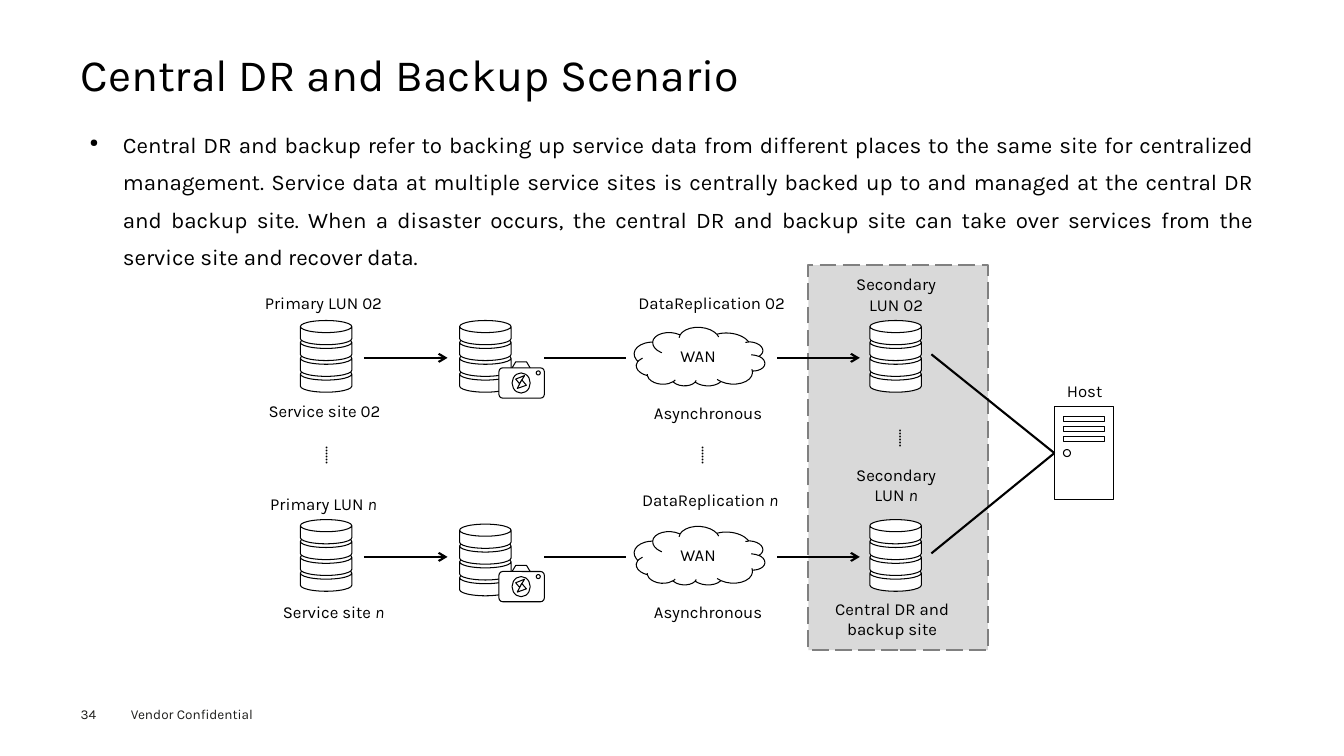
from lxml import etree
from pptx import Presentation
from pptx.dml.color import RGBColor
from pptx.enum.dml import MSO_LINE
from pptx.enum.shapes import MSO_CONNECTOR, MSO_SHAPE
from pptx.enum.text import MSO_ANCHOR, PP_ALIGN
from pptx.oxml.ns import qn
from pptx.util import Inches, Pt

RECTANGLE, ROUNDED = MSO_SHAPE.RECTANGLE, MSO_SHAPE.ROUNDED_RECTANGLE
CAN, CLOUD, OVAL = MSO_SHAPE.CAN, MSO_SHAPE.CLOUD, MSO_SHAPE.OVAL
HEXAGON, TRIANGLE = MSO_SHAPE.FLOWCHART_PREPARATION, MSO_SHAPE.ISOSCELES_TRIANGLE
STRAIGHT, LONG_DASH = MSO_CONNECTOR.STRAIGHT, MSO_LINE.LONG_DASH
TOP, MIDDLE = MSO_ANCHOR.TOP, MSO_ANCHOR.MIDDLE
LEFT, CENTER, JUSTIFY = PP_ALIGN.LEFT, PP_ALIGN.CENTER, PP_ALIGN.JUSTIFY

BLACK = RGBColor(0x00, 0x00, 0x00)
INK = RGBColor(0x1D, 0x1D, 0x1B)
WHITE = RGBColor(0xFF, 0xFF, 0xFF)
PALE_GRAY = RGBColor(0xD9, 0xD9, 0xD9)
GRAY = RGBColor(0x80, 0x80, 0x80)

LABEL_FONT = {"name": "Karla", "size": Pt(12)}
TITLE_FONT = {"name": "Karla", "size": Pt(32)}
BODY_FONT = {"name": "Karla", "size": Pt(16)}
FOOTER_FONT = {"name": "Karla", "size": Pt(9.7)}

# Grid: square cells, ten to the inch
CELL = Inches(0.1)
SLIDE_COLUMNS, SLIDE_ROWS = 133.33, 75
MARGIN, CONTENT_COLUMNS = 8, 117.3
SITE_PITCH = 19.75

BODY = (
    "Central DR and backup refer to backing up service data from different places "
    "to the same site for centralized management. Service data at multiple service "
    "sites is centrally backed up to and managed at the central DR and backup site. "
    "When a disaster occurs, the central DR and backup site can take over services "
    "from the service site and recover data."
)

# Captions: column, row, columns, rows, text, italic ending
CAPTIONS = [
    (24.1, 27.5, 16, 5, "Primary LUN 02", ""),
    (24.1, 47.5, 16, 5, "Primary LUN ", "n"),
    (24.5, 38.3, 15.4, 5, "Service site 02", ""),
    (26.3, 59.2, 13.6, 3, "Service site ", "n"),
    (61.9, 27.5, 17.4, 5, "DataReplication 02", ""),
    (61.7, 47.1, 17.5, 5, "DataReplication ", "n"),
    (62.7, 38.5, 15.1, 5, "Asynchronous", ""),
    (62.7, 58.2, 15.1, 5, "Asynchronous", ""),
    (82.8, 26.7, 12.2, 5, "Secondary LUN 02", ""),
    (82.8, 45.6, 12.2, 5, "Secondary LUN ", "n"),
    (80.9, 58.9, 15.2, 5, "Central DR and backup site", ""),
    (101.5, 37.3, 12.2, 3, "Host", ""),
]


def cells(*counts):
    return [round(count * CELL) for count in counts]


def apply_format(target, values):
    for name, value in values.items():
        setattr(target, name, value)


def add_figure(shapes, kind, column, row, columns, rows, fill=WHITE,
               line=BLACK, weight=0.75, rotation=0):
    shape = shapes.add_shape(kind, *cells(column, row, columns, rows))
    shape.shadow.inherit = False
    shape.rotation = rotation
    shape.fill.solid()
    shape.fill.fore_color.rgb = fill
    if line is None:
        shape.line.fill.background()
    else:
        shape.line.color.rgb = line
        shape.line.width = Pt(weight)
    return shape


def write_text(shape, text, ending="", font=LABEL_FONT, color=BLACK,
               align=CENTER, anchor=MIDDLE, insets=(1, 0.5)):
    """Write one paragraph, with an optional italic ending."""
    frame = shape.text_frame
    across, down = cells(*insets)
    apply_format(frame, {
        "word_wrap": True, "vertical_anchor": anchor,
        "margin_left": across, "margin_right": across,
        "margin_top": down, "margin_bottom": down,
    })
    paragraph = frame.paragraphs[0]
    paragraph.alignment = align
    for part, italic in ((text, False), (ending, True)):
        if part:
            run = paragraph.add_run()
            run.text = part
            apply_format(run.font, {**font, "italic": italic})
            run.font.color.rgb = color
    return paragraph


def add_text(shapes, column, row, columns, rows, text, ending="", **style):
    box = shapes.add_textbox(*cells(column, row, columns, rows))
    return write_text(box, text, ending, **style)


def add_bullet(paragraph):
    properties = paragraph._p.get_or_add_pPr()
    hang = cells(3.3)[0]
    properties.set("marL", str(hang))
    properties.set("indent", str(-hang))
    etree.SubElement(properties, qn("a:buSzPct"), val="50000")
    etree.SubElement(properties, qn("a:buChar"), char="●")


def add_line(shapes, start, end, arrow=False):
    connector = shapes.add_connector(STRAIGHT, *cells(*start, *end))
    connector.line.color.rgb = BLACK
    connector.line.width = Pt(1.5)
    if arrow:
        etree.SubElement(connector.line._get_or_add_ln(), qn("a:tailEnd"), type="arrow")
    etree.SubElement(connector.element.spPr, qn("a:effectLst"))
    return connector


def add_disks(slide, column, row):
    """Stack four cans from the bottom up."""
    shapes = slide.shapes.add_group_shape().shapes
    for level in reversed(range(4)):
        can = add_figure(shapes, CAN, column, row + level * 1.57, 5.1, 2.4)
        can.adjustments[0] = 0.5


def add_camera(slide, column, row):
    shapes = slide.shapes.add_group_shape().shapes
    add_figure(shapes, HEXAGON, column + 1.3, row - 0.6, 1.8, 1.2)
    body = add_figure(shapes, ROUNDED, column, row, 4.5, 3)
    body.adjustments[0] = 0.123
    add_figure(shapes, OVAL, column + 1.3, row + 0.5, 1.8, 2)
    add_figure(shapes, OVAL, column + 3.7, row + 0.3, 0.4, 0.4)
    add_figure(shapes, TRIANGLE, column + 1.9, row + 0.6, 0.6, 0.9, rotation=50)
    add_figure(shapes, TRIANGLE, column + 1.8, row + 1.3, 0.7, 0.9, rotation=229.2)


def add_wan(slide, column, row):
    add_figure(slide.shapes, CLOUD, column, row, 13, 5.9, rotation=184.2)
    name = add_figure(slide.shapes, RECTANGLE, column + 3.6, row + 1.25, 7.1, 3, line=None)
    write_text(name, "WAN", align=LEFT)


def add_host(slide, column, row):
    case = add_figure(slide.shapes, RECTANGLE, column, row, 5.9, 9.3)
    for slot in range(3):
        add_figure(slide.shapes, RECTANGLE, column + 0.9, row + 1 + slot, 4.1, 0.5)
    add_figure(slide.shapes, OVAL, column + 0.9, row + 4.3, 0.7, 0.7)
    return case


def add_dots(slide, column, row):
    box = slide.shapes.add_textbox(*cells(column, row, 4, 4.9))
    write_text(box, "......", align=LEFT)
    box.element.txBody.bodyPr.set("vert", "eaVert")


def add_site(slide, offset, snapshot_offset, host):
    """Draw one replication chain from primary to secondary storage."""
    for column in (29.8, 86.3):
        add_disks(slide, column, 31.8 + offset)
    add_disks(slide, 45.6, 31.8 + snapshot_offset)
    add_camera(slide, 49.5, 36.5 + snapshot_offset)
    add_wan(slide, 62.9, 32.5 + offset)
    middle = 35.5 + offset
    for start, end, arrow in ((36.1, 44.4, True), (54, 62.1, False), (77.1, 85.3, True)):
        add_line(slide.shapes, (start, middle), (end, middle), arrow)
    link = add_line(slide.shapes, (92.4, 35.15 + offset), (104.6, 44.95))
    link.end_connect(host, 1)


def main():
    presentation = Presentation()
    presentation.slide_width, presentation.slide_height = cells(SLIDE_COLUMNS, SLIDE_ROWS)
    slide = presentation.slides.add_slide(presentation.slide_layouts[6])
    shapes = slide.shapes

    # Heading, body and footer
    title = add_text(shapes, MARGIN, 4.9, CONTENT_COLUMNS, 5.4,
                     "Central DR and Backup Scenario",
                     font=TITLE_FONT, align=LEFT, insets=(0, 0))
    title.line_spacing = 0.9
    body = add_text(shapes, MARGIN, 11.5, CONTENT_COLUMNS, 15, BODY,
                    font=BODY_FONT, align=JUSTIFY, anchor=TOP, insets=(0.9, 0.4))
    add_bullet(body)
    body.line_spacing = 1.4
    footer = {"font": FOOTER_FONT, "color": INK, "align": LEFT, "anchor": TOP}
    add_text(shapes, MARGIN, 70, 5.5, 1.6, "34", insets=(0, 0), **footer)
    add_text(shapes, 12, 69.5, 16, 2.7, "Vendor Confidential", **footer)

    # Central site panel and host
    panel = add_figure(shapes, RECTANGLE, 80.2, 26.3, 17.8, 38.2, PALE_GRAY, GRAY, 1.5)
    panel.line.dash_style = LONG_DASH
    host = add_host(slide, 104.6, 40.3)

    # Replication chains
    add_site(slide, 0, 0, host)
    add_site(slide, SITE_PITCH, 20.2, host)

    # Captions and continuation dots
    for caption in CAPTIONS:
        add_text(shapes, *caption)
    for column, row in ((31, 43.3), (68.3, 43.3), (87.9, 41.6)):
        add_dots(slide, column, row)

    presentation.save("out.pptx")


if __name__ == "__main__":
    main()
